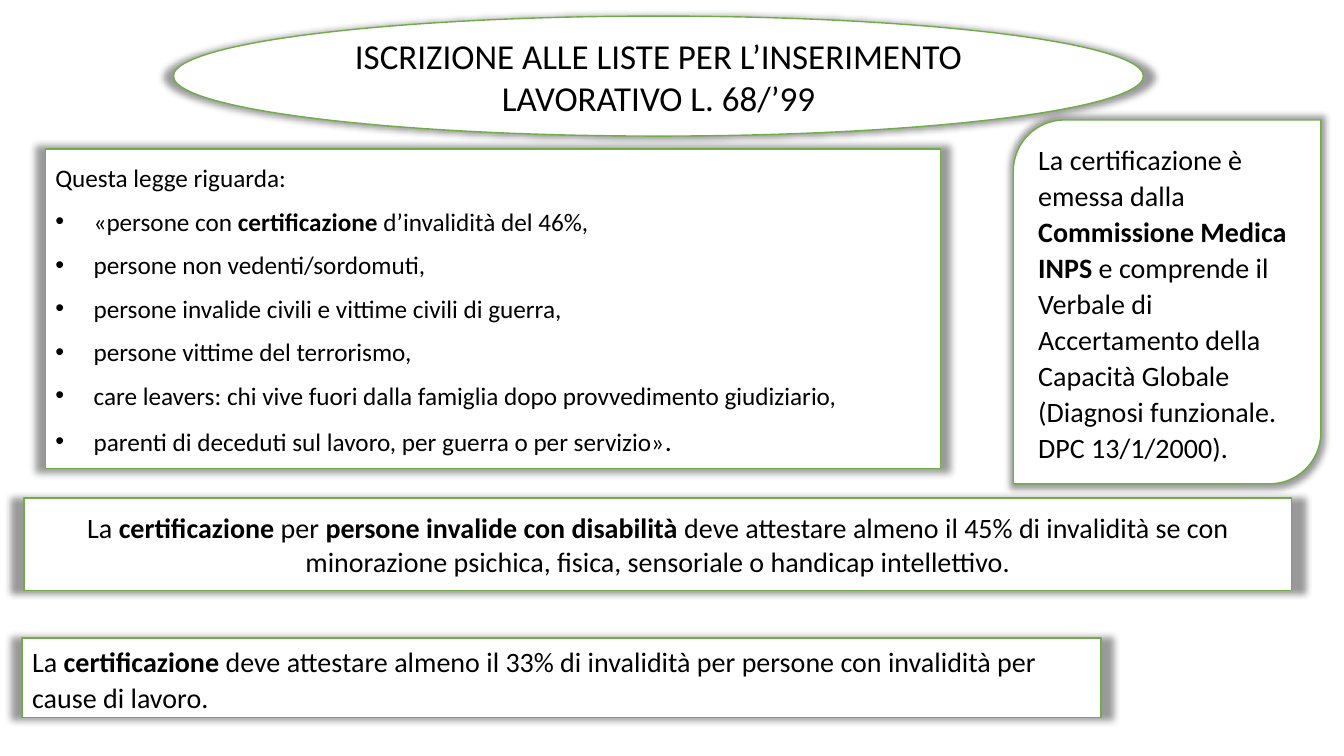
from lxml import etree
from pptx import Presentation
from pptx import util as u
from pptx.dml.color import RGBColor
from pptx.enum import shapes, text
from pptx.oxml import ns

COLORS = {"paper": "FFFFFF", "outline": "70AD47", "ink": "000000"}
FONT = "Calibri"
SHAPE = shapes.MSO_SHAPE
ALIGN = text.PP_ALIGN
BENEFICIARIES = [
    "«persone con **certificazione **d’invalidità del 46%,",
    "persone non vedenti/sordomuti,",
    "persone invalide civili e vittime civili di guerra,",
    "persone vittime del terrorismo,",
    "care leavers: chi vive fuori dalla famiglia dopo provvedimento giudiziario,",
    "parenti di deceduti sul lavoro, per guerra o per servizio»",
]


def color(name):
    """Return the named colour."""
    return RGBColor.from_string(COLORS[name])


def add_child(parent, tag, **attributes):
    """Append a DrawingML element and return it."""
    return etree.SubElement(parent, ns.qn(tag), attributes)


def add_glow_shadow(shape):
    """Give the shape a soft centred shadow slightly larger than itself."""
    shape.shadow.inherit = False
    effects = shape._element.spPr.find(ns.qn("a:effectLst"))
    shadow = add_child(effects, "a:outerShdw", blurRad="63500", sx="102000",
                       sy="102000", algn="ctr", rotWithShape="0")
    ink = add_child(shadow, "a:srgbClr", val=COLORS["ink"])
    add_child(ink, "a:alpha", val="40000")


def add_panel(page, box, kind=SHAPE.RECTANGLE):
    """Draw a white, green-edged panel in the box."""
    panel = page.shapes.add_shape(kind, *(u.Inches(length) for length in box))
    panel.fill.solid()
    panel.fill.fore_color.rgb = color("paper")
    panel.line.color.rgb = color("outline")
    panel.line.width = u.Pt(1)
    add_glow_shadow(panel)
    panel.text_frame.word_wrap = True
    panel.text_frame.vertical_anchor = text.MSO_ANCHOR.MIDDLE
    return panel


def write(para, words, size, align=ALIGN.LEFT, spaced=True):
    """Write words into a paragraph, with bold between double asterisks."""
    para.alignment = align
    para.font.name = FONT
    para.font.size = u.Pt(size)
    para.font.color.rgb = color("ink")
    if spaced:
        para.line_spacing = 1.07
        para.space_after = u.Pt(8)
    for index, part in enumerate(words.split("**")):
        span = para.add_run()
        span.text = part
        if index % 2:
            span.font.bold = True


def add_bullet(para):
    """Give the paragraph a hanging round bullet."""
    properties = para._p.get_or_add_pPr()
    indent = u.Inches(0.38)
    properties.set("marL", str(indent))
    properties.set("indent", str(-indent))
    font = properties.makeelement(ns.qn("a:buFont"), {"typeface": "Arial"})
    bullet = properties.makeelement(ns.qn("a:buChar"), {"char": "•"})
    defaults = properties.find(ns.qn("a:defRPr"))
    defaults.addprevious(font)
    defaults.addprevious(bullet)


def add_title(page, box):
    """Place the oval heading."""
    panel = add_panel(page, box, SHAPE.OVAL)
    write(panel.text_frame.paragraphs[0],
          "ISCRIZIONE ALLE LISTE PER L’INSERIMENTO LAVORATIVO L. 68/’99",
          25, ALIGN.CENTER, spaced=False)


def add_beneficiaries(page, box):
    """Place the list of people the law concerns."""
    frame = add_panel(page, box).text_frame
    write(frame.paragraphs[0], "Questa legge riguarda:", 18)
    for words in BENEFICIARIES:
        para = frame.add_paragraph()
        write(para, words, 18)
        add_bullet(para)
    full_stop = para.add_run()
    full_stop.text = "."
    full_stop.font.size = u.Pt(20)


def add_disability_note(page, box):
    """Place the centred note on the 45% threshold."""
    panel = add_panel(page, box)
    write(panel.text_frame.paragraphs[0],
          "La **certificazione** per **persone invalide con disabilità **deve "
          "attestare almeno il 45% di invalidità se con minorazione psichica, "
          "fisica, sensoriale o handicap intellettivo.",
          20, ALIGN.CENTER, spaced=False)


def add_work_note(page, box):
    """Place the note on the 33% threshold."""
    panel = add_panel(page, box)
    write(panel.text_frame.paragraphs[0],
          "La **certificazione** deve attestare almeno il 33% di invalidità "
          "per persone con invalidità per cause di lavoro.", 20)


def add_issuer_note(page, box):
    """Place the round-cornered note on who issues the certificate."""
    panel = add_panel(page, box, SHAPE.ROUND_2_DIAG_RECTANGLE)
    write(panel.text_frame.paragraphs[0],
          "La certificazione è emessa dalla **Commissione Medica INPS** e "
          "comprende il Verbale di Accertamento della Capacità Globale "
          "(Diagnosi funzionale. DPC 13/1/2000).", 20)


def main():
    """Build the slide and save the deck."""
    deck = Presentation()
    deck.slide_width = u.Inches(13.33)
    deck.slide_height = u.Inches(7.5)
    page = deck.slides.add_slide(deck.slide_layouts[6])
    add_title(page, (1.72, 0.16, 9.62, 1.19))
    add_beneficiaries(page, (0.45, 1.48, 8.88, 3.17))
    add_disability_note(page, (0.24, 4.94, 12.57, 0.92))
    add_work_note(page, (0.22, 6.33, 10.7, 0.79))
    add_issuer_note(page, (10.05, 1.19, 3.05, 3.61))
    deck.save("out.pptx")


if __name__ == "__main__":
    main()
